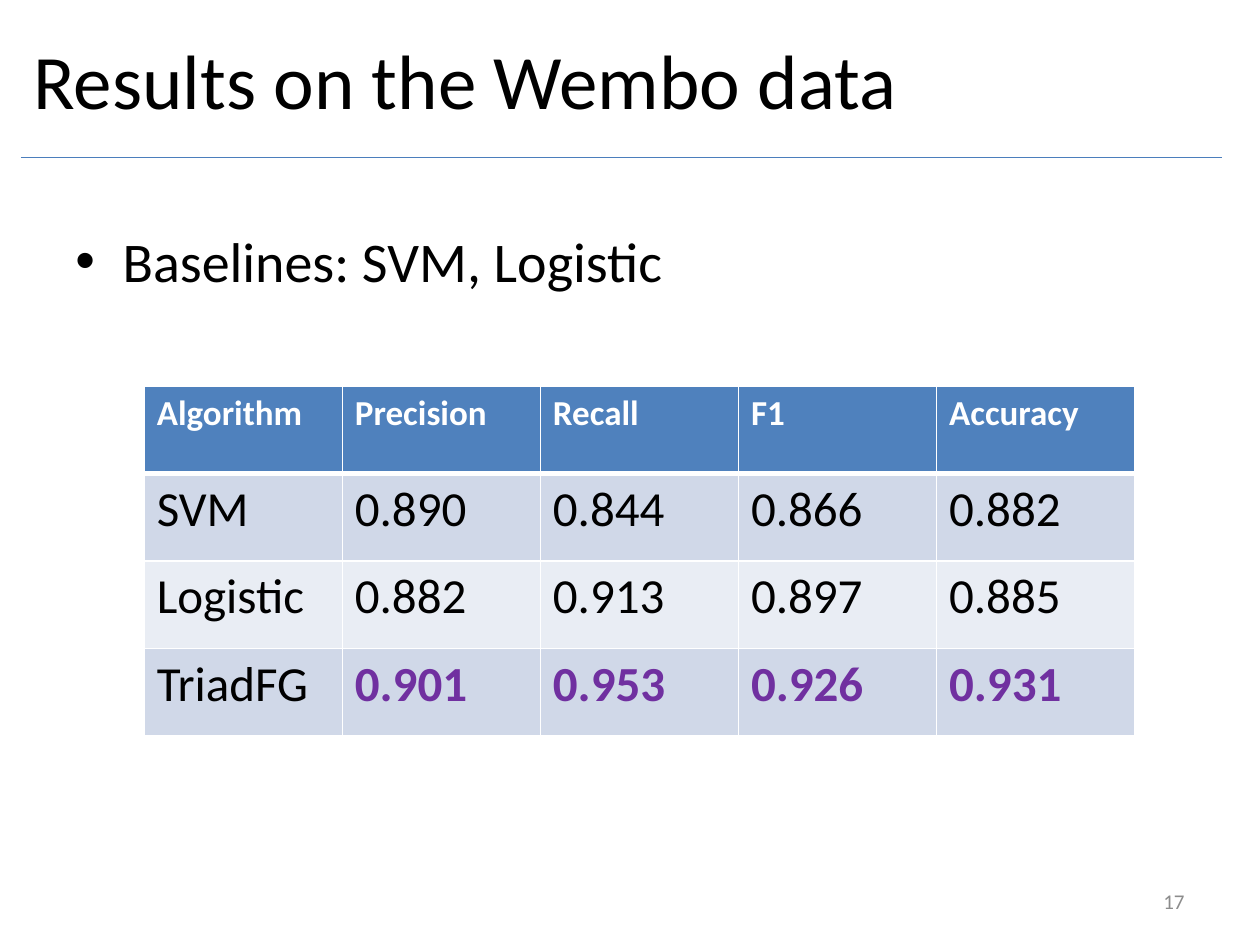
import pptx
import pptx.util
import pptx.dml.color
import pptx.enum.shapes
import pptx.enum.text
import pptx.oxml
import pptx.oxml.ns

Pt = pptx.util.Pt
ALIGN = pptx.enum.text.PP_ALIGN
ANCHOR = pptx.enum.text.MSO_ANCHOR

HEADS = ["Algorithm", "Precision", "Recall", "F1", "Accuracy"]
SCORES = [
    ["SVM", "0.890", "0.844", "0.866", "0.882"],
    ["Logistic", "0.882", "0.913", "0.897", "0.885"],
    ["TriadFG", "0.901", "0.953", "0.926", "0.931"],
]


def color(code):
    return pptx.dml.color.RGBColor.from_string(code)


def node(tag, inner="", **attrs):
    """Make one DrawingML element."""
    text = " ".join(f'{key}="{val}"' for key, val in attrs.items())
    space = pptx.oxml.ns.nsdecls("a")
    return pptx.oxml.parse_xml(f"<a:{tag} {space} {text}>{inner}</a:{tag}>")


def write(frame, text, size=28, ink="000000", bold=False, align=ALIGN.LEFT):
    para = frame.paragraphs[0]
    para.alignment = align
    run = para.add_run()
    run.text = text
    run.font.name = "Calibri"
    run.font.size = Pt(size)
    run.font.bold = bold
    run.font.color.rgb = color(ink)
    return para


def add_text(slide, box, text, anchor=ANCHOR.TOP, **style):
    frame = slide.shapes.add_textbox(*map(Pt, box)).text_frame
    frame.word_wrap = True
    frame.vertical_anchor = anchor
    return write(frame, text, **style)


def add_bullet(slide, box, text, **style):
    para = add_text(slide, box, text, **style)
    para.space_before = Pt(3)
    props = para._p.get_or_add_pPr()
    props.set("marL", str(Pt(27)))
    props.set("indent", str(Pt(-27)))
    props.append(node("buFont", typeface="Arial"))
    props.append(node("buChar", char="•"))


def add_rule(slide, left, right, y):
    kind = pptx.enum.shapes.MSO_CONNECTOR.STRAIGHT
    rule = slide.shapes.add_connector(kind, Pt(left), Pt(y), Pt(right), Pt(y))
    rule.line.width = Pt(0.75)
    rule.line.color.rgb = color("4B7EBC")
    rule._element.spPr.append(node("effectLst"))


def set_edges(cell, **widths):
    """Draw white borders; they must precede the cell's fill."""
    props = cell._tc.get_or_add_tcPr()
    fill = '<a:solidFill><a:srgbClr val="FFFFFF"/></a:solidFill>'
    for place, (side, width) in enumerate(widths.items()):
        props.insert(place, node("ln" + side, fill, w=Pt(width)))


def add_scores(slide, box):
    rows = [HEADS] + SCORES
    table = slide.shapes.add_table(len(rows), len(HEADS), *map(Pt, box)).table
    for r, row in enumerate(rows):
        head, best = r == 0, r == len(SCORES)
        shade = "4F81BD" if head else ("E9EDF4", "D0D8E8")[r % 2]
        for c, text in enumerate(row):
            cell = table.cell(r, c)
            cell.fill.solid()
            cell.fill.fore_color.rgb = color(shade)
            set_edges(cell, L=1, R=1, T=3 if r == 1 else 1, B=3 if head else 1)
            if head:
                style = dict(size=20, ink="FFFFFF", bold=True)
            elif best and c > 0:
                style = dict(ink="7030A0", bold=True)
            else:
                style = {}
            write(cell.text_frame, text, **style)


def main():
    deck = pptx.Presentation()
    deck.slide_width, deck.slide_height = Pt(720), Pt(540)
    slide = deck.slides.add_slide(deck.slide_layouts[6])

    # Title and rule
    add_text(slide, (12, 0, 648, 90), "Results on the Wembo data",
             anchor=ANCHOR.MIDDLE, size=44)
    add_rule(slide, 12, 698.4, 90)

    # Body
    add_bullet(slide, (36, 126, 648, 384), "Baselines: SVM, Logistic", size=32)
    add_scores(slide, (82.4, 220.5, 566, 200))

    # Page number
    add_text(slide, (516, 500.5, 168, 28.75), "17", anchor=ANCHOR.MIDDLE,
             size=12, ink="8C8C8C", align=ALIGN.RIGHT)

    deck.save("out.pptx")


if __name__ == "__main__":
    main()
